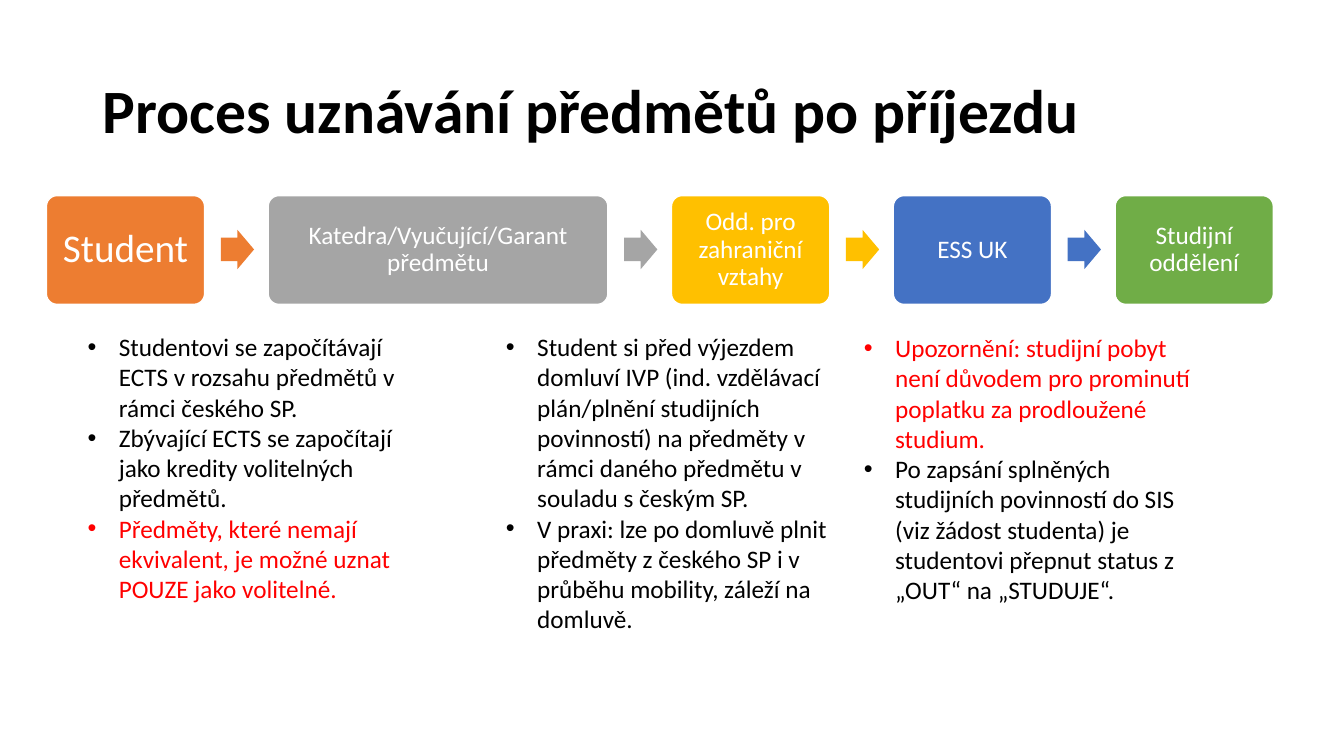
from lxml import etree
from pptx import Presentation
from pptx import util as u
from pptx.dml.color import RGBColor
from pptx.enum import shapes, text
from pptx.oxml.ns import qn

COLORS = {
    "orange": "ED7D31", "gray": "A5A5A5", "gold": "FFC000", "blue": "4472C4",
    "green": "70AD47", "white": "FFFFFF", "black": "000000", "red": "FF0000",
}
FONT = "Calibri"
TOP, HEIGHT, GAP, INSET = 1.94, 1.08, 0.63, 0.08

# label, width, color, font size
STEPS = [
    ("Student", 1.57, "orange", 28),
    ("Katedra/Vyučující/Garant předmětu", 3.37, "gray", 18),
    ("Odd. pro zahraniční vztahy", 1.57, "gold", 18),
    ("ESS UK", 1.57, "blue", 18),
    ("Studijní oddělení", 1.57, "green", 18),
]

# left, top, height, items
NOTES = [
    (0.77, 3.24, 3.43, [
        ("Studentovi se započítávají ECTS v rozsahu předmětů v rámci českého SP.", "black"),
        ("Zbývající ECTS se započítají jako kredity volitelných předmětů.", "black"),
        ("Předměty, které nemají ekvivalent, je možné uznat POUZE jako volitelné.", "red"),
    ]),
    (4.92, 3.24, 3.43, [
        ("Student si před výjezdem domluví IVP (ind. vzdělávací plán/plnění studijních "
         "povinností) na předměty v rámci daného předmětu v souladu s českým SP.", "black"),
        ("V praxi: lze po domluvě plnit předměty z českého SP i v průběhu mobility, "
         "záleží na domluvě.", "black"),
    ]),
    (8.47, 3.25, 3.13, [
        ("Upozornění: studijní pobyt není důvodem pro prominutí poplatku za prodloužené "
         "studium.", "red"),
        ("Po zapsání splněných studijních povinností do SIS (viz žádost studenta) je "
         "studentovi přepnut status z „OUT“ na „STUDUJE“.", "black"),
    ]),
]


def rgb(name):
    return RGBColor.from_string(COLORS[name])


def style(para, size, color, bold=False):
    font = para.font
    font.name, font.size, font.bold = FONT, u.Pt(size), bold
    font.color.rgb = rgb(color)


def add_box(slide, left, top, width, height):
    box = slide.shapes.add_textbox(*map(u.Inches, (left, top, width, height)))
    box.text_frame.word_wrap = True
    return box.text_frame


def add_title(slide, title):
    frame = add_box(slide, 0.92, 0.4, 11.5, 1.45)
    frame.vertical_anchor = text.MSO_ANCHOR.MIDDLE
    para = frame.paragraphs[0]
    para.text, para.line_spacing = title, 0.9
    style(para, 44, "black", True)


def add_solid(slide, kind, color, left, top, width, height):
    shape = slide.shapes.add_shape(kind, *map(u.Inches, (left, top, width, height)))
    shape.shadow.inherit = False
    shape.fill.solid()
    shape.fill.fore_color.rgb = rgb(color)
    shape.line.fill.background()
    return shape


def add_step(slide, left, label, width, color, size):
    step = add_solid(slide, shapes.MSO_SHAPE.ROUNDED_RECTANGLE, color,
                     left, TOP, width, HEIGHT)
    step.adjustments[0] = 0.1
    step.line.color.rgb = rgb("white")
    step.line.width = u.Pt(1)
    frame = step.text_frame
    frame.word_wrap = True
    frame.vertical_anchor = text.MSO_ANCHOR.MIDDLE
    frame.margin_left = frame.margin_right = u.Inches(INSET)
    frame.margin_top = frame.margin_bottom = u.Inches(INSET)
    para = frame.paragraphs[0]
    para.text, para.line_spacing = label, 0.9
    para.alignment = text.PP_ALIGN.CENTER
    style(para, size, "white")


def add_arrow(slide, left, color):
    arrow = add_solid(slide, shapes.MSO_SHAPE.RIGHT_ARROW, color, left, 2.28, 0.33, 0.39)
    arrow.adjustments[0] = 0.6
    arrow.adjustments[1] = 0.5


def add_flow(slide):
    left = 0.46
    for i, (label, width, color, size) in enumerate(STEPS):
        add_step(slide, left, label, width, color, size)
        left += width
        if i < len(STEPS) - 1:
            add_arrow(slide, left + 0.16, color)
        left += GAP


def set_bullet(para):
    props = para._p.get_or_add_pPr()
    indent = u.Inches(0.31)
    props.set("marL", str(indent))
    props.set("indent", str(-indent))
    etree.SubElement(props, qn("a:buFont"), typeface="Arial")
    etree.SubElement(props, qn("a:buChar"), char="•")


def add_notes(slide, left, top, height, items):
    frame = add_box(slide, left, top, 3.59, height)
    for i, (line, color) in enumerate(items):
        para = frame.add_paragraph() if i else frame.paragraphs[0]
        para.text = line
        set_bullet(para)
        style(para, 18, color)


def main():
    deck = Presentation()
    deck.slide_width, deck.slide_height = u.Inches(13.33), u.Inches(7.5)
    slide = deck.slides.add_slide(deck.slide_layouts[6])
    add_title(slide, "Proces uznávání předmětů po příjezdu")
    add_flow(slide)
    for column in NOTES:
        add_notes(slide, *column)
    deck.save("out.pptx")


if __name__ == "__main__":
    main()
